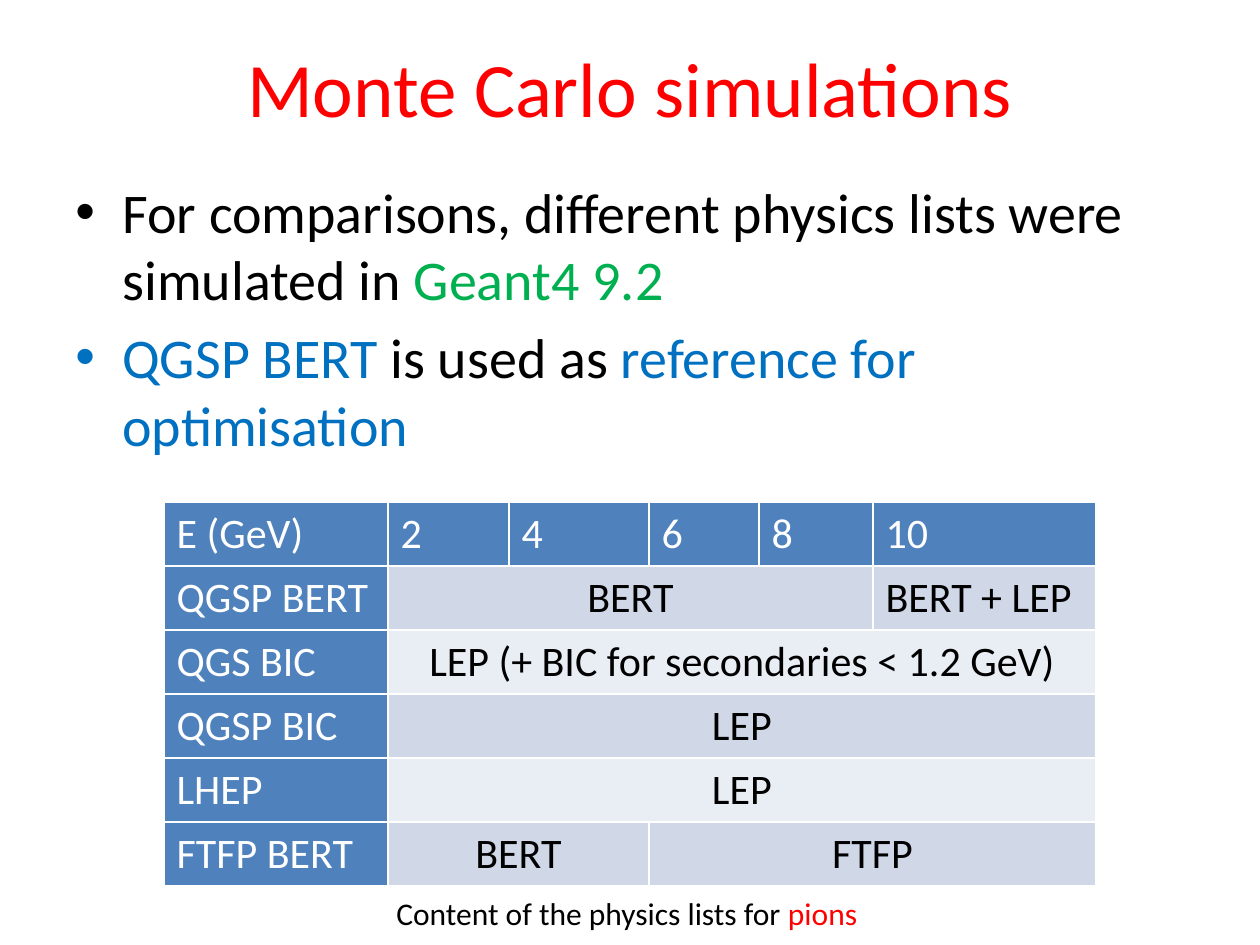
from lxml import etree
from pptx import Presentation
from pptx.dml.color import RGBColor
from pptx.enum.text import MSO_ANCHOR, PP_ALIGN
from pptx.oxml.ns import qn
from pptx.util import Emu, Pt

PX = 914400 // 126  # 126 px to the inch
FONT = "Calibri"
CENTER, LEFT = PP_ALIGN.CENTER, PP_ALIGN.LEFT
MIDDLE, TOP = MSO_ANCHOR.MIDDLE, MSO_ANCHOR.TOP

RED = RGBColor(0xFF, 0x00, 0x00)
GREEN = RGBColor(0x00, 0xB0, 0x50)
BLUE = RGBColor(0x00, 0x70, 0xC0)
BLACK = RGBColor(0x00, 0x00, 0x00)
WHITE = RGBColor(0xFF, 0xFF, 0xFF)
HEAD_FILL = RGBColor(0x4F, 0x81, 0xBD)
BANDS = [RGBColor(0xD0, 0xD8, 0xE8), RGBColor(0xE9, 0xED, 0xF4)]

# Content
TITLE = [[("Monte Carlo simulations", RED)]]
BULLETS = [
    [("For comparisons, different physics lists were simulated in ", BLACK),
     ("Geant4 9.2", GREEN)],
    [("QGSP BERT ", BLUE), ("is used as ", BLACK),
     ("reference for optimisation", BLUE)],
]
CAPTION = [[("Content of the physics lists for ", BLACK), ("pions", RED)]]
ENERGIES = ["E (GeV)", "2", "4", "6", "8", "10"]
PHYSICS_LISTS = [  # name, then (model, number of energy columns)
    ("QGSP BERT", [("BERT", 4), ("BERT + LEP", 1)]),
    ("QGS BIC", [("LEP (+ BIC for secondaries < 1.2 GeV)", 5)]),
    ("QGSP BIC", [("LEP", 5)]),
    ("LHEP", [("LEP", 5)]),
    ("FTFP BERT", [("BERT", 2), ("FTFP", 3)]),
]
COL_WIDTHS = [224, 121, 140, 110, 114, 223]
ROW_HEIGHT = 64


def px(n):
    return Emu(n * PX)


def style(font, size, color):
    font.name, font.size, font.bold = FONT, Pt(size), False
    font.color.rgb = color


def add_text(s, box, paragraphs, size, align=LEFT, anchor=TOP, wrap=True):
    tf = s.shapes.add_textbox(*map(px, box)).text_frame
    tf.word_wrap, tf.vertical_anchor = wrap, anchor
    for i, runs in enumerate(paragraphs):
        p = tf.paragraphs[0] if i == 0 else tf.add_paragraph()
        p.alignment = align
        for text, color in runs:
            r = p.add_run()
            r.text = text
            style(r.font, size, color)
    return tf


def add_bullet(p, indent):
    pPr = p._p.get_or_add_pPr()
    pPr.set("marL", str(px(indent)))
    pPr.set("indent", str(-px(indent)))
    etree.SubElement(pPr, qn("a:buFont")).set("typeface", "Arial")
    etree.SubElement(pPr, qn("a:buChar")).set("char", "•")


def add_borders(cell, color, width):
    tcPr = cell._tc.get_or_add_tcPr()
    for i, side in enumerate(("lnL", "lnR", "lnT", "lnB")):
        ln = etree.Element(qn("a:" + side), w=str(Pt(width)))
        fill = etree.SubElement(ln, qn("a:solidFill"))
        etree.SubElement(fill, qn("a:srgbClr")).set("val", str(color))
        tcPr.insert(i, ln)


def set_cell(cell, text, fill, color, align=LEFT):
    cell.text = text
    cell.fill.solid()
    cell.fill.fore_color.rgb = fill
    p = cell.text_frame.paragraphs[0]
    p.alignment = align
    style(p.runs[0].font, 24, color)


prs = Presentation()
prs.slide_width, prs.slide_height = px(1260), px(945)
s = prs.slides.add_slide(prs.slide_layouts[6])

# Title and bullets
add_text(s, (63, 8, 1134, 157), TITLE, 44, CENTER, MIDDLE)
body = add_text(s, (63, 171, 1134, 352), BULLETS, 32)
for i, p in enumerate(body.paragraphs):
    add_bullet(p, 47)
    if i:
        p.space_before = Pt(6.4)

# Table of models by energy
n_rows = len(PHYSICS_LISTS) + 1
table = s.shapes.add_table(n_rows, len(ENERGIES), px(164), px(502),
                           px(sum(COL_WIDTHS)), px(n_rows * ROW_HEIGHT)).table
table.first_col = True
for column, width in zip(table.columns, COL_WIDTHS):
    column.width = px(width)
for row in table.rows:
    row.height = px(ROW_HEIGHT)
for col, energy in enumerate(ENERGIES):
    set_cell(table.cell(0, col), energy, HEAD_FILL, WHITE)
for row, (name, models) in enumerate(PHYSICS_LISTS, 1):
    set_cell(table.cell(row, 0), name, HEAD_FILL, WHITE)
    col = 1
    for model, span in models:
        cell = table.cell(row, col)
        if span > 1:
            cell.merge(table.cell(row, col + span - 1))
        set_cell(cell, model, BANDS[(row - 1) % 2], BLACK,
                 CENTER if span > 1 else LEFT)
        col += span
for cell in table.iter_cells():
    add_borders(cell, WHITE, 1)

# Table caption
add_text(s, (384, 888, 491, 50), CAPTION, 18, wrap=False)

prs.save("out.pptx")
